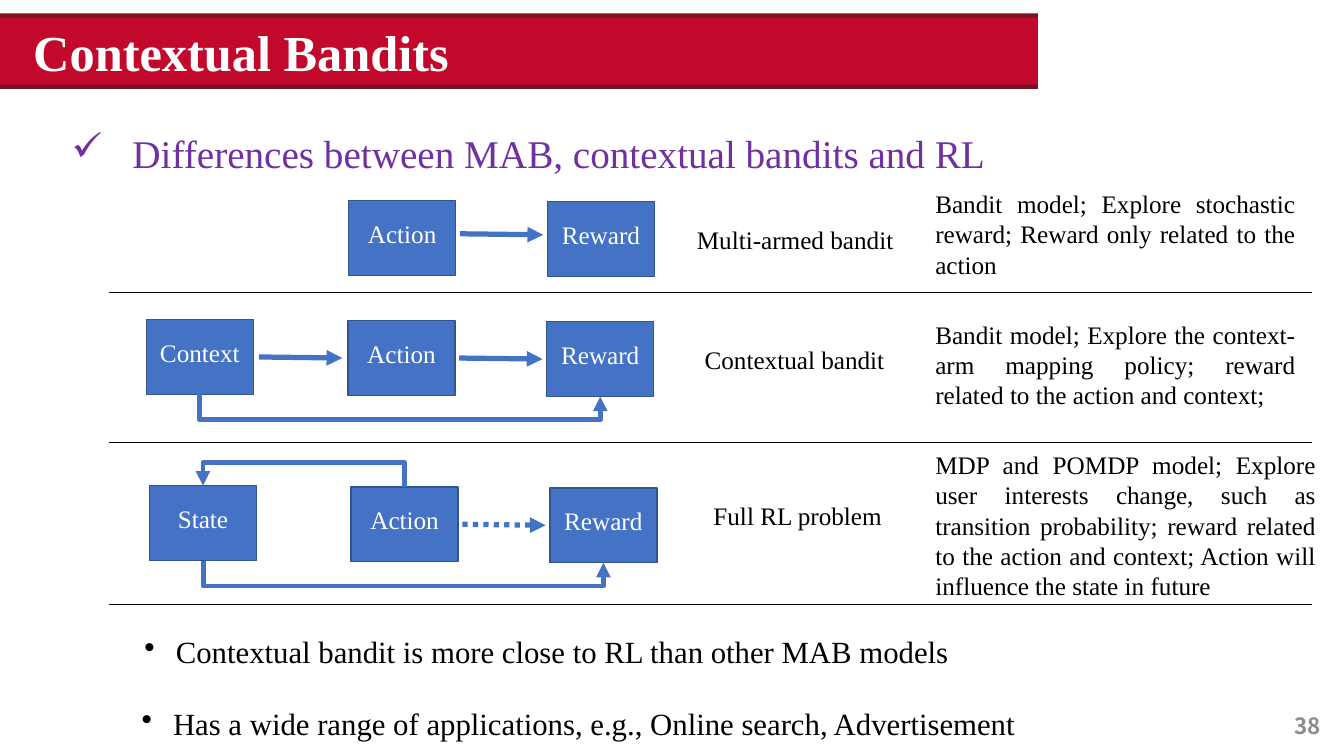
from lxml.etree import SubElement
from pptx import Presentation
from pptx.dml.color import RGBColor
from pptx.enum.dml import MSO_LINE
from pptx.enum.shapes import MSO_CONNECTOR, MSO_SHAPE
from pptx.enum.text import MSO_ANCHOR, PP_ALIGN
from pptx.oxml.ns import qn
from pptx.util import Pt

WHITE = RGBColor(0xFF, 0xFF, 0xFF)
BLACK = RGBColor(0, 0, 0)
GRAY = RGBColor(0x8C, 0x8C, 0x8C)
RED = RGBColor(0xC3, 0x09, 0x2B)
MAROON = RGBColor(0x7B, 0x12, 0x22)
PURPLE = RGBColor(0x70, 0x30, 0xA0)
BLUE = RGBColor(0x44, 0x72, 0xC4)
NAVY = RGBColor(0x32, 0x54, 0x91)
SERIF = "Times New Roman"
SANS = "Noto Sans CJK SC"

BOX_W, BOX_H = 76.5, 53.5
COLUMNS = (0, 144, 286)  # box offsets from the left of a row
STEP = 0.75  # each box sits this much lower than the one before
ARROW = 59.5

ROWS = [
    dict(box=(105, 142.5), names=("", "Action", "Reward"), lift=3,
         label="Multi-armed bandit", drop=14.5, note_at=(131, 271.5),
         note="Bandit model; Explore stochastic reward; "
              "Reward only related to the action"),
    dict(box=(104.5, 228.25), names=("Context", "Action", "Reward"),
         label="Contextual bandit", drop=14.5, note_at=(224.5, 271.5),
         note="Bandit model; Explore the context-arm mapping policy; "
              "reward related to the action and context;"),
    dict(box=(106.75, 347), names=("State", "Action", "Reward"),
         label="Full RL problem", drop=6.5, note_at=(317.5, 286),
         note="MDP and POMDP model; Explore user interests change, such as "
              "transition probability; reward related to the action and "
              "context; Action will influence the state in future"),
]
RULES = (209, 316, 432)


def write(frame, words, size, color, align=PP_ALIGN.LEFT, bullet=None,
          indent=0, **style):
    """Fill a text frame with one paragraph; style holds font values."""
    frame.word_wrap = True
    para = frame.paragraphs[0]
    para.text = words
    para.alignment = align
    if bullet:
        props = para._p.get_or_add_pPr()
        props.set("marL", str(int(Pt(indent))))
        props.set("indent", str(-int(Pt(indent))))
        SubElement(props, qn("a:buChar")).set("char", bullet)
    font = para.runs[0].font
    font.color.rgb = color
    for key, value in (dict(name=SERIF, size=Pt(size)) | style).items():
        setattr(font, key, value)
    return para


def label(slide, box, words, size, color=BLACK, **style):
    frame = slide.shapes.add_textbox(*map(Pt, box)).text_frame
    return write(frame, words, size, color, **style)


def block(slide, box, fill, line=None):
    shape = slide.shapes.add_shape(MSO_SHAPE.RECTANGLE, *map(Pt, box))
    shape.shadow.inherit = False
    shape.fill.solid()
    shape.fill.fore_color.rgb = fill
    if line is None:
        shape.line.fill.background()
    else:
        shape.line.color.rgb = line
        shape.line.width = Pt(1)
    return shape


def link(slide, start, end, color=BLUE, width=3.75, head=True,
         kind=MSO_CONNECTOR.STRAIGHT):
    line = slide.shapes.add_connector(kind, *map(Pt, (*start, *end)))
    line.line.color.rgb = color
    line.line.width = Pt(width)
    if head:
        SubElement(line.line._get_or_add_ln(), qn("a:tailEnd")).set(
            "type", "triangle")
    SubElement(line._element.spPr, qn("a:effectLst"))
    return line


def loop(slide, start, end, depth):
    """Draw a U-shaped arrow; a positive depth hangs it below its ends."""
    line = link(slide, start, end, width=3.5, kind=MSO_CONNECTOR.ELBOW)
    (x1, y1), (x2, y2) = start, end
    wide, high = abs(y2 - y1), abs(x2 - x1)
    place = dict(left=(x1 + x2 - wide) / 2, top=(y1 + y2 - high) / 2,
                 width=wide, height=high)
    for key, value in place.items():
        setattr(line, key, Pt(value))
    frame = line._element.spPr.find(qn("a:xfrm"))
    for key in ("flipH", "flipV"):
        frame.attrib.pop(key, None)
    frame.set("rot", "16200000")
    frame.set("flipH" if depth > 0 else "flipV", "1")
    shape = line._element.spPr.find(qn("a:prstGeom"))
    guides = shape.find(qn("a:avLst"))
    if guides is None:
        guides = SubElement(shape, qn("a:avLst"))
    guide = SubElement(guides, qn("a:gd"))
    guide.set("name", "adj1")
    guide.set("fmla", f"val {round(abs(depth) / wide * 100000)}")


def banner(slide, box, words):
    left, top, width, height = box
    block(slide, box, MAROON)
    block(slide, (left, top + 3, width, height - 6), RED)
    title = slide.shapes.title
    place = dict(left=left + 16.5, top=top + 2, width=width - 24, height=51)
    for key, value in place.items():
        setattr(title, key, Pt(value))
    title.text_frame.vertical_anchor = MSO_ANCHOR.MIDDLE
    write(title.text_frame, words, 36, WHITE, bold=True)
    slide.shapes._spTree.append(title._element)


def model(slide, box, names, label_text, drop, lift=0):
    """Draw one row of boxes with arrows and its caption; return box spots."""
    left, top = box
    spots = [(left + x, top + i * STEP) for i, x in enumerate(COLUMNS)]
    for (x, y), name in zip(spots, names):
        if name:
            frame = block(slide, (x, y, BOX_W, BOX_H), BLUE, NAVY).text_frame
            frame.margin_left = frame.margin_right = 0
            frame.margin_bottom = Pt(10)
            frame.vertical_anchor = MSO_ANCHOR.MIDDLE
            write(frame, name, 18, WHITE, align=PP_ALIGN.CENTER)
    label(slide, (left + 376.5, top + drop, 173, 28), label_text, 18,
          align=PP_ALIGN.CENTER)
    return spots


def arrow(slide, spot, after, lift=0):
    """Draw an arrow centred in the gap between two boxes."""
    x = (spot[0] + BOX_W + after[0] - ARROW) / 2
    y = spot[1] + BOX_H / 2 - lift
    return link(slide, (x, y), (x + ARROW, y + STEP))


def middle(spot, below=True):
    return spot[0] + BOX_W / 2, spot[1] + BOX_H * below


def diagram(slide, left, width):
    spots = []
    for row in ROWS:
        spots.append(model(slide, row["box"], row["names"], row["label"],
                           row["drop"]))
        y, wide = row["note_at"]
        label(slide, (left + 583, y, wide, 73), row["note"], 18,
              align=PP_ALIGN.JUSTIFY)
    bandit, context, full = spots
    arrow(slide, *bandit[1:], lift=ROWS[0]["lift"])
    arrow(slide, *context[:2])
    arrow(slide, *context[1:])
    arrow(slide, *full[1:]).line.dash_style = MSO_LINE.ROUND_DOT
    for first, _, last in (context, full):
        loop(slide, middle(first), middle(last), 18)
    loop(slide, middle(full[1], False), middle(full[0], False), -17.5)
    for y in RULES:
        link(slide, (left, y), (left + width, y), BLACK, 0.5, head=False)


def points(slide, box):
    left, top, width, height = box
    lines = ((0, "Contextual bandit is more close to RL than other MAB models"),
             (-2, "Has a wide range of applications, e.g., "
                  "Online search, Advertisement"))
    for i, (shift, words) in enumerate(lines):
        para = label(slide, (left + shift, top + i * 51, width, height),
                     words, 22, bullet="•", indent=22.5)
        para.line_spacing = 1.5


def main():
    deck = Presentation()
    deck.slide_width, deck.slide_height = Pt(960), Pt(540)
    slide = deck.slides.add_slide(deck.slide_layouts[5])
    banner(slide, (0, 9.5, 741.5, 54), "Contextual Bandits")
    label(slide, (44, 89, 672, 41),
          "Differences between MAB, contextual bandits and RL", 28, PURPLE,
          bullet="✓", indent=43.5)
    diagram(slide, 78, 859)
    points(slide, (96, 435.5, 718, 42.5))
    label(slide, (734.5, 505, 216, 29), "38", 16, GRAY,
          align=PP_ALIGN.RIGHT, name=SANS, bold=True)
    deck.save("out.pptx")


if __name__ == "__main__":
    main()
